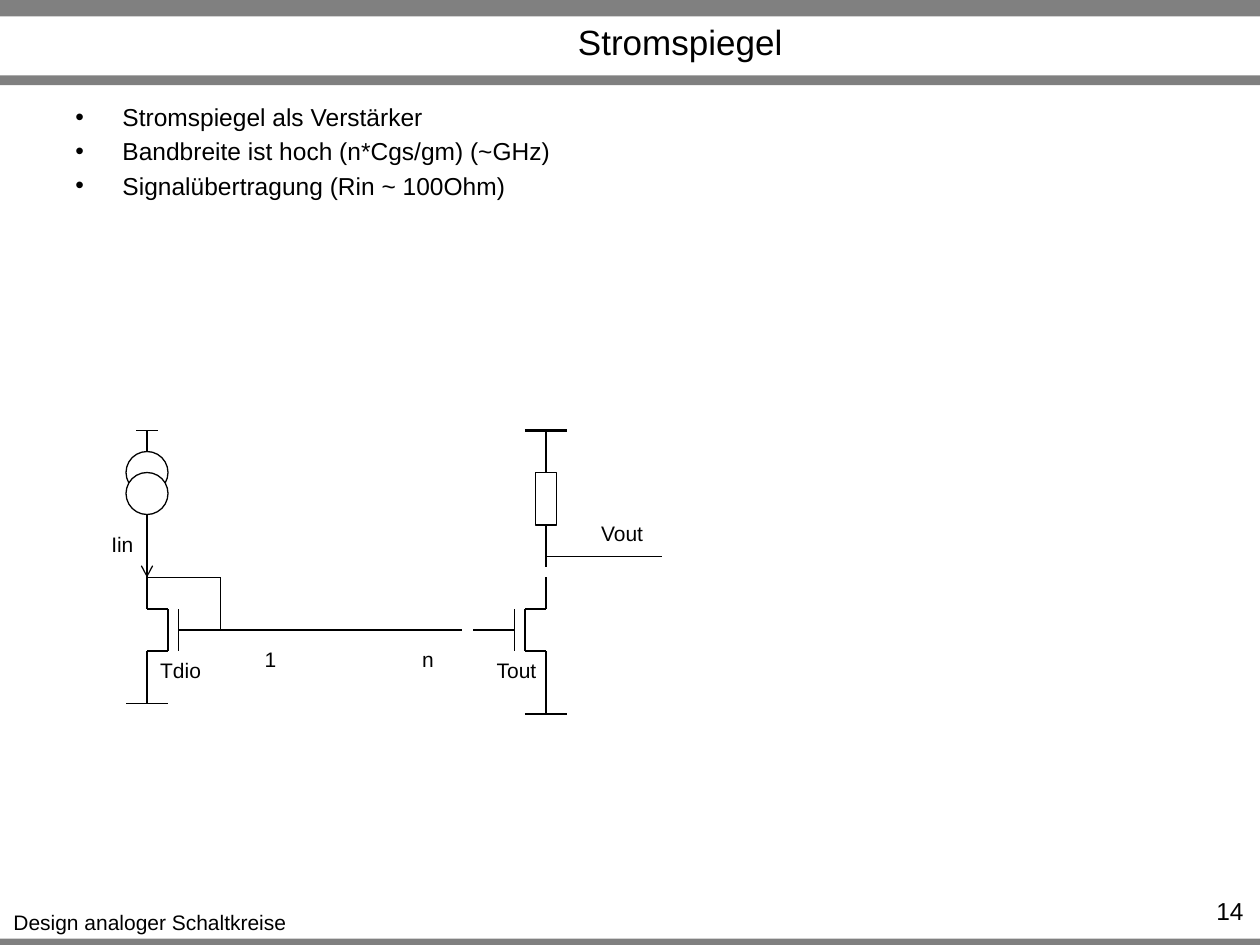
from lxml import etree
from pptx import Presentation
from pptx.dml.color import RGBColor as RGB
from pptx.enum.shapes import MSO_CONNECTOR as Link, MSO_SHAPE as Preset
from pptx.enum.text import MSO_ANCHOR as Anchor, PP_ALIGN as Align
from pptx.oxml.ns import qn
from pptx.util import Cm, Pt

COLORS = {"ink": "000000", "bar": "808080", "paper": "FFFFFF"}
GRID = 2.54 / 12  # circuit raster in cm


def grid(*steps):
    return [Cm(step * GRID) for step in steps]


class Sheet:
    font = "Arial"
    thin = 0.75

    def __init__(self, slide):
        self.shapes = slide.shapes

    def color(self, name):
        return RGB.from_string(COLORS[name])

    def shape(self, preset, box, fill=None, outlined=True):
        part = self.shapes.add_shape(preset, *box)
        part.shadow.inherit = False
        if fill:
            part.fill.solid()
            part.fill.fore_color.rgb = self.color(fill)
        else:
            part.fill.background()
        if outlined:
            part.line.color.rgb = self.color("ink")
            part.line.width = Pt(self.thin)
        else:
            part.line.fill.background()

    def wire(self, x1, y1, x2, y2, width=thin, arrow=False):
        link = self.shapes.add_connector(Link.STRAIGHT, *grid(x1, y1, x2, y2))
        link.line.color.rgb = self.color("ink")
        link.line.width = Pt(width)
        if arrow:
            etree.SubElement(link.line._get_or_add_ln(), qn("a:tailEnd"), type="arrow")
        etree.SubElement(link._element.spPr, qn("a:effectLst"))

    def text(self, lines, box, size, align=Align.CENTER, wrap=True,
             anchor=Anchor.TOP, bullets=False):
        frame = self.shapes.add_textbox(*box).text_frame
        for name, value in {"word_wrap": wrap, "vertical_anchor": anchor}.items():
            setattr(frame, name, value)
        for index, line in enumerate(lines):
            para = frame.add_paragraph() if index else frame.paragraphs[0]
            para.text = line
            para.alignment = align
            if index:
                para.space_before = Pt(2.8)
            if bullets:
                props = para._p.get_or_add_pPr()
                indent = Cm(0.95)
                props.set("marL", str(indent))
                props.set("indent", str(-indent))
                etree.SubElement(props, qn("a:buFont"), typeface=self.font)
                etree.SubElement(props, qn("a:buChar"), char="•")
            for run in para.runs:
                for name, value in {"name": self.font, "size": Pt(size)}.items():
                    setattr(run.font, name, value)
                run.font.color.rgb = self.color("ink")

    def transistor(self, drain, side):
        """Draw a transistor at row 60 whose gate points to side (+1 or -1)."""
        channel, plate, lead, gate = (drain + side * n for n in (2, 3, 5, 7))
        for ends in (
            (drain, 58, drain, 55),
            (drain, 58, channel, 58),
            (channel, 62, channel, 58),
            (drain, 62, channel, 62),
            (drain, 65, drain, 62),
            (plate, 62, plate, 58),
            (lead, 60, plate, 60),
            (lead, 60, gate, 60),
        ):
            self.wire(*ends)


def main():
    deck = Presentation()
    deck.slide_width, deck.slide_height = Cm(25.4), Cm(19.05)
    sheet = Sheet(deck.slides.add_slide(deck.slide_layouts[6]))

    # Frame bars
    for top, height in ((18.92, 0.2), (0, 0.33), (1.52, 0.2)):
        sheet.shape(Preset.RECTANGLE, (0, Cm(top), Cm(25.4), Cm(height)), "bar", False)

    # Footer, title, bullets, page number
    sheet.text(["Design analoger Schaltkreise"],
               (0, Cm(18.21), Cm(6.05), Cm(0.76)), 12, wrap=False)
    sheet.text(["Stromspiegel"], (Cm(3.3), Cm(0.36), Cm(20.83), Cm(0.97)), 20,
               anchor=Anchor.MIDDLE)
    sheet.text(["Stromspiegel als Verstärker",
                "Bandbreite ist hoch (n*Cgs/gm) (~GHz)",
                "Signalübertragung (Rin ~ 100Ohm)"],
               (Cm(1.27), Cm(1.93), Cm(22.86), Cm(2.31)), 14, Align.LEFT, bullets=True)
    sheet.text(["14"], (Cm(23.11), Cm(17.93), Cm(2.21), Cm(0.61)), 14, Align.RIGHT)

    # Current source and input branch
    in_x, out_x = 14, 52
    sheet.wire(in_x - 1, 41, in_x + 1, 41)
    sheet.wire(in_x, 41, in_x, 43)
    for top in (43, 45):
        sheet.shape(Preset.OVAL, grid(in_x - 2, top, 4, 4), "paper")
    sheet.wire(in_x, 49, in_x, 57)
    sheet.wire(in_x, 53, in_x, 55, arrow=True)
    sheet.wire(in_x, 64, in_x, 67)
    sheet.wire(in_x - 2, 67, in_x + 2, 67)

    # Diode connection and gate line
    sheet.wire(in_x, 55, 21, 55)
    sheet.wire(21, 55, 21, 60)
    sheet.wire(19, 60, 44, 60)

    # Mirror pair
    sheet.transistor(in_x, 1)
    sheet.transistor(out_x, -1)

    # Load resistor and output branch
    sheet.wire(out_x - 2, 41, out_x + 2, 41, width=1.75)
    sheet.wire(out_x, 41, out_x, 45)
    sheet.shape(Preset.RECTANGLE, grid(out_x - 1, 45, 2, 5))
    sheet.wire(out_x, 50, out_x, 54)
    sheet.wire(out_x, 53, 63, 53)
    sheet.wire(out_x, 65, out_x, 68)
    sheet.wire(out_x - 2, 68, out_x + 2, 68)

    # Circuit labels
    for label, left, top, width in (
        ("Iin", 9.4, 50, 4.5),
        ("Tdio", 14, 62, 6.4),
        ("Tout", 46.1, 62, 6.2),
        ("1", 24, 61, 3.5),
        ("n", 39, 61, 3.5),
        ("Vout", 56, 49, 6.5),
    ):
        sheet.text([label], grid(left, top, width, 3.6), 12, wrap=False)

    deck.save("out.pptx")


if __name__ == "__main__":
    main()
